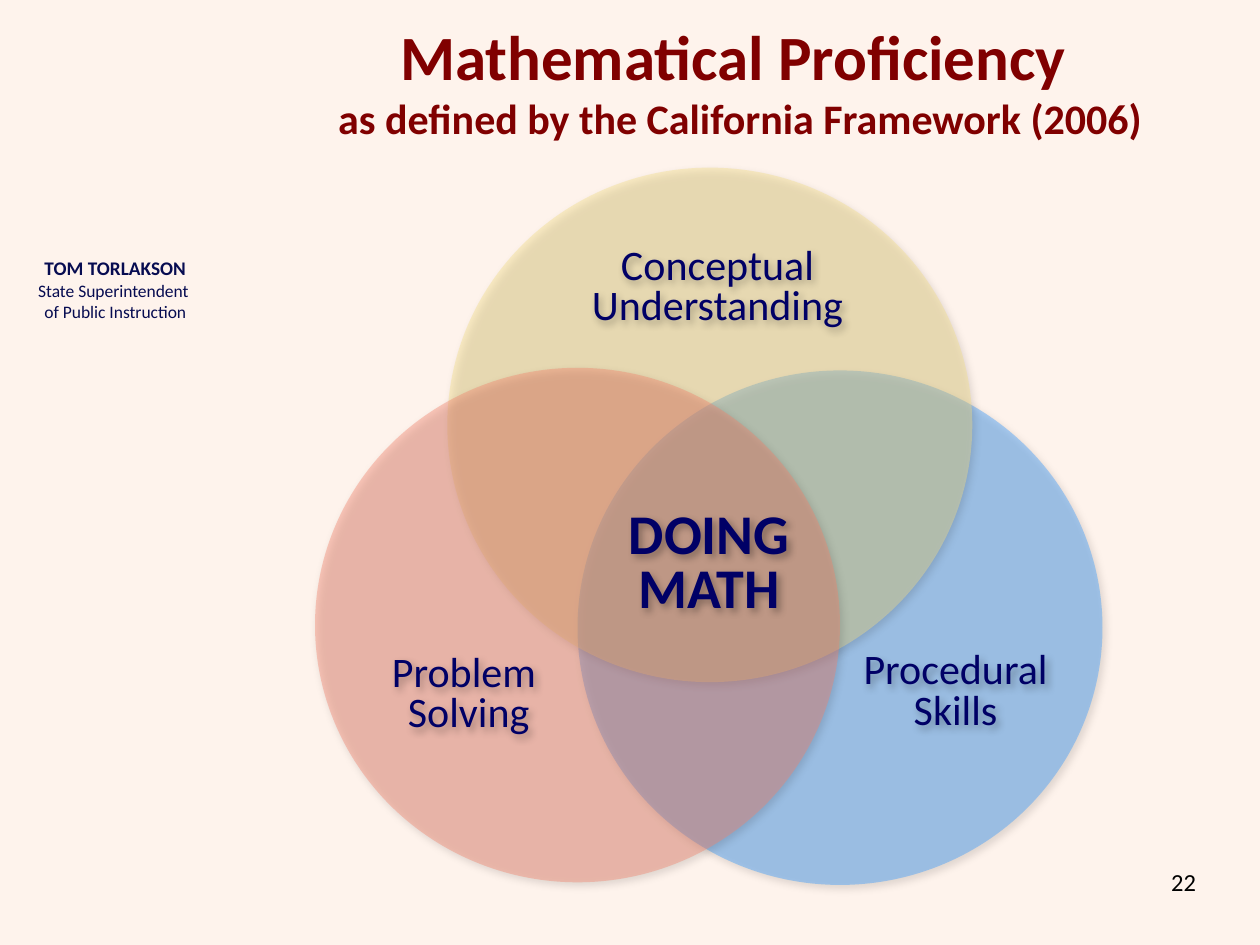
from copy import deepcopy

from lxml.etree import SubElement
from pptx import Presentation
from pptx.dml.color import RGBColor as RGB
from pptx.enum.shapes import MSO_SHAPE as Shape
from pptx.enum.text import MSO_ANCHOR as Anchor, PP_ALIGN as Align
from pptx.oxml.ns import qn
from pptx.util import Pt

THEME = {
    "font": "Calibri",
    "paper": "FEEDE2", "paper_alpha": 63, "circle_alpha": 40,
    "shadow": {"color": "000000", "alpha": 30, "blur": 4.5, "dist": 2.6, "dir": 53},
    "styles": {
        "title": {"size": 36, "bold": True, "color": "800000"},
        "subtitle": {"size": 24, "bold": True, "color": "800000"},
        "name": {"size": 11, "bold": True, "color": "070C51"},
        "office": {"size": 10, "bold": False, "color": "070C51"},
        "label": {"size": 24, "bold": False, "color": "000066"},
        "center": {"size": 32, "bold": True, "color": "000066"},
        "number": {"size": 14, "bold": False, "color": "000000"},
    },
}
SLIDE = (720, 540)
CIRCLE = (300, 294)
CIRCLES = [(330, 211.7, "3399FF"), (255.6, 95.8, "F2DD86"), (180, 210.2, "F3826B")]

HEADINGS = [
    ((5.8, 138.2, 120.2, 54), [("TOM TORLAKSON", "name"),
                               ("State Superintendent ", "office"),
                               ("of Public Instruction", "office")]),
    ((126, 0.7, 594, 90), [("Mathematical Proficiency ", "title"),
                           ("as defined by the California Framework (2006)", "subtitle")]),
]
LABELS = [
    ((312.5, 138.2, 195, 54.7), [("Conceptual", "label"), ("Understanding", "label")]),
    ((314.6, 288.7, 181.4, 69), [("DOING", "center"), ("MATH", "center")]),
    ((180.7, 370.8, 174.2, 54.7), [("Problem ", "label"), ("Solving", "label")]),
    ((462.2, 369.4, 167.8, 54.7), [("Procedural", "label"), ("Skills", "label")]),
]
NUMBER = ((558.7, 491.8, 131.8, 36), [("22", "number")])


def set_alpha(color, percent):
    """Give a colour element an opacity in percent."""
    SubElement(color, qn("a:alpha"), val=str(percent * 1000))


def add_shadow(s):
    """Give a shape the soft shadow of the theme."""
    look = THEME["shadow"]
    s.shadow.inherit = False
    effects = s._element.spPr.find(qn("a:effectLst"))
    outer = SubElement(effects, qn("a:outerShdw"), blurRad=str(Pt(look["blur"])),
                       dist=str(Pt(look["dist"])), dir=str(look["dir"] * 60000),
                       algn="ctr", rotWithShape="0")
    set_alpha(SubElement(outer, qn("a:srgbClr"), val=look["color"]), look["alpha"])


def add_area(slide, kind, box, color, alpha):
    """Add a translucent shape without outline."""
    s = slide.shapes.add_shape(kind, *map(Pt, box))
    s.shadow.inherit = False
    s.fill.solid()
    s.fill.fore_color.rgb = RGB.from_string(color)
    set_alpha(s._element.spPr.find(f"{qn('a:solidFill')}/{qn('a:srgbClr')}"), alpha)
    s.line.fill.background()
    return s


def add_text(slide, box, lines, align=Align.CENTER, anchor=Anchor.TOP, spacing=1.0):
    """Add one paragraph of styled lines."""
    s = slide.shapes.add_textbox(*map(Pt, box))
    tf = s.text_frame
    tf.word_wrap, tf.vertical_anchor = True, anchor
    p = tf.paragraphs[0]
    p.alignment, p.line_spacing = align, spacing
    for i, (text, style) in enumerate(lines):
        if i:
            p.add_line_break()
            p._p[-1].append(deepcopy(r._r.get_or_add_rPr()))
        r = p.add_run()
        r.text = text
        look = THEME["styles"][style]
        values = {"name": THEME["font"], "size": Pt(look["size"]), "bold": look["bold"]}
        for key, value in values.items():
            setattr(r.font, key, value)
        r.font.color.rgb = RGB.from_string(look["color"])
    return s


def main():
    """Build the slide and save it."""
    prs = Presentation()
    prs.slide_width, prs.slide_height = map(Pt, SLIDE)
    slide = prs.slides.add_slide(prs.slide_layouts[6])
    add_area(slide, Shape.RECTANGLE, (0, 0, *SLIDE), THEME["paper"], THEME["paper_alpha"])
    for left, top, color in CIRCLES:
        add_shadow(add_area(slide, Shape.OVAL, (left, top, *CIRCLE), color,
                            THEME["circle_alpha"]))
    for box, lines in HEADINGS:
        add_text(slide, box, lines, anchor=Anchor.MIDDLE)
    for box, lines in LABELS:
        add_shadow(add_text(slide, box, lines, spacing=0.8))
    add_text(slide, *NUMBER, align=Align.RIGHT)
    prs.save("out.pptx")


if __name__ == "__main__":
    main()
